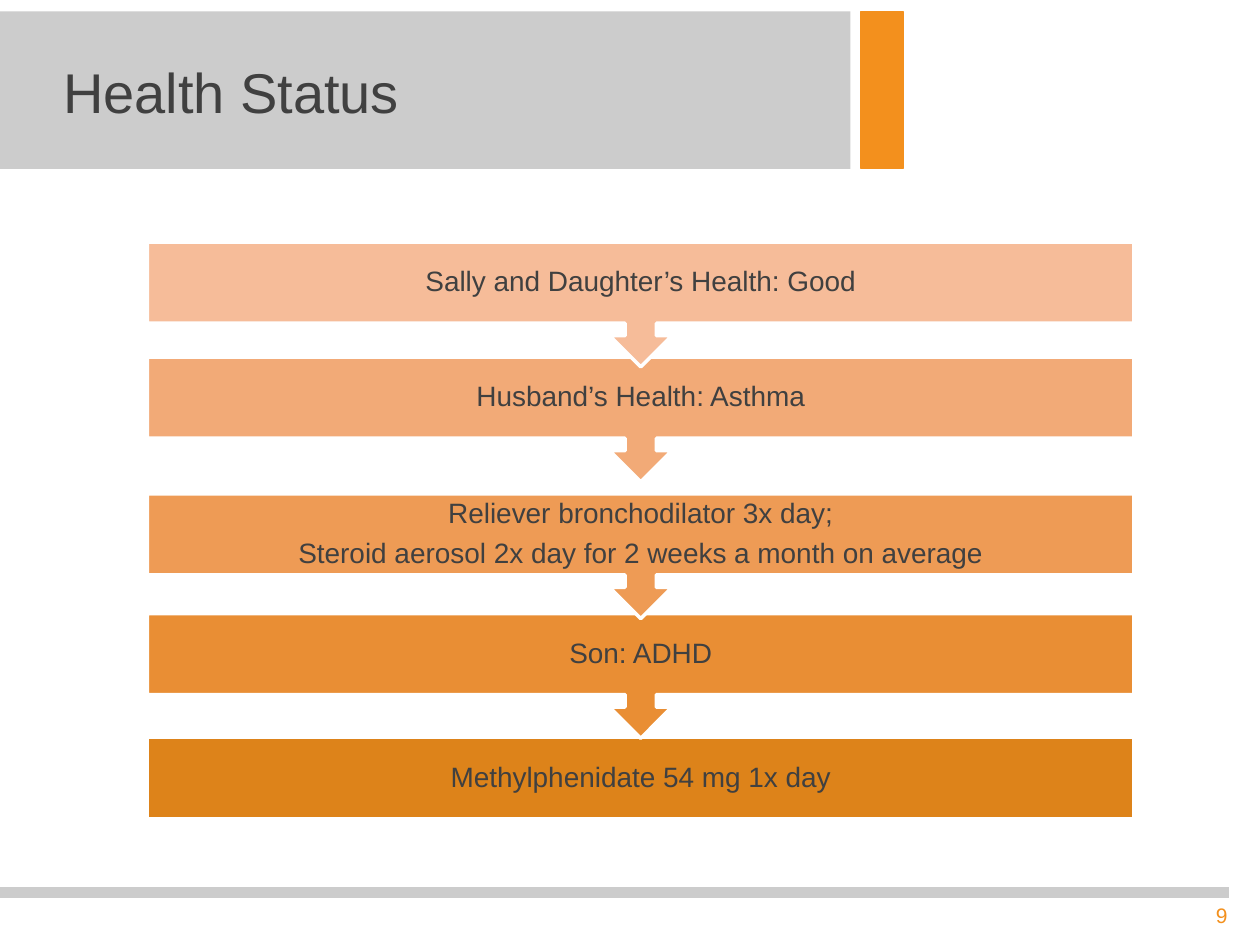
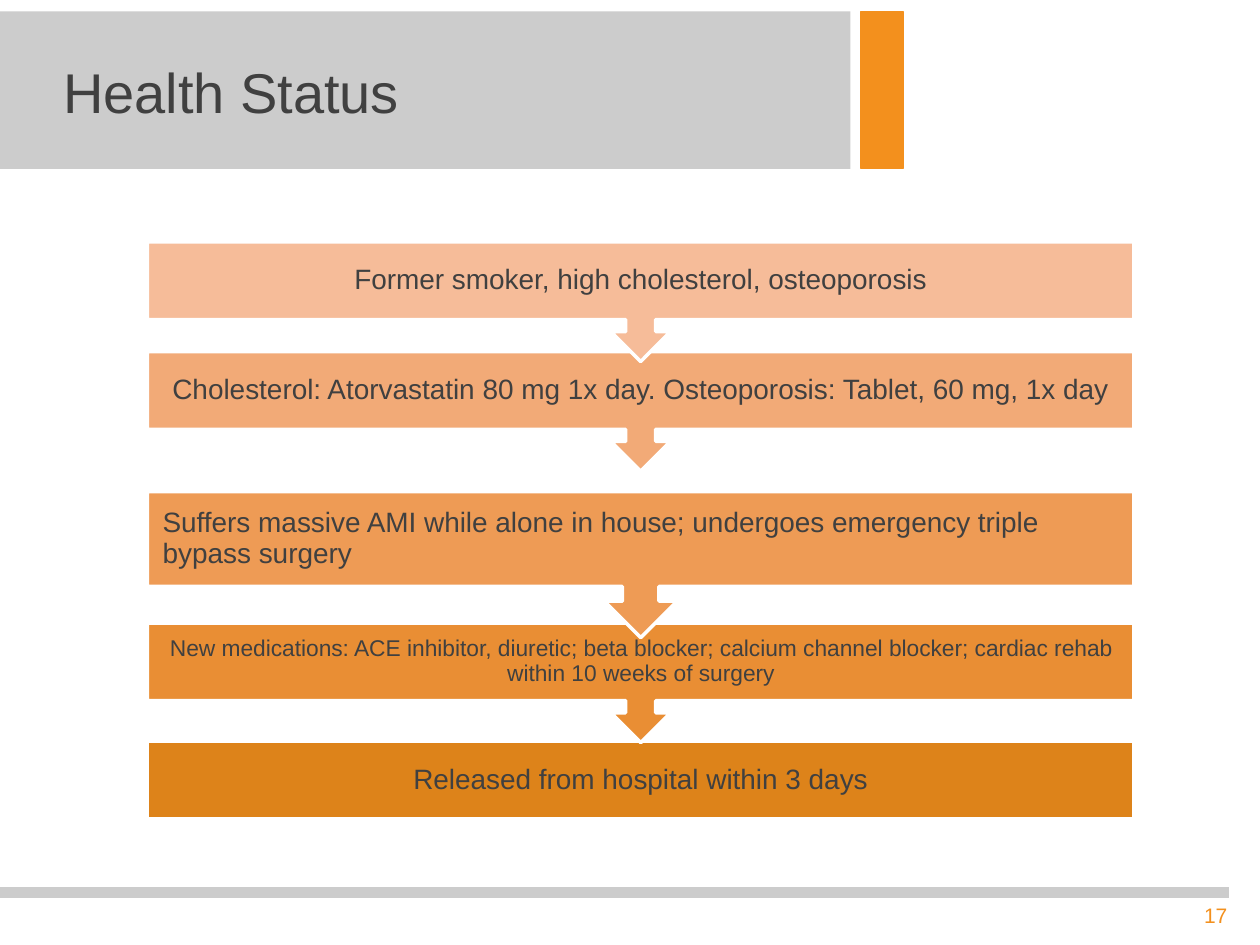
from dataclasses import dataclass

from lxml.etree import SubElement
from pptx import Presentation
from pptx.dml.color import RGBColor
from pptx.enum.shapes import MSO_CONNECTOR as Connector, MSO_SHAPE as Preset
from pptx.enum.text import MSO_ANCHOR as Anchor, PP_ALIGN as Align
from pptx.oxml.ns import qn
from pptx.util import Length, Pt

FONT = "Arial"
ORANGE = RGBColor(0xF3, 0x90, 0x1D)
GREY = RGBColor(0xCC, 0xCC, 0xCC)
DARK = RGBColor(0x40, 0x40, 0x40)
WHITE = RGBColor(0xFF, 0xFF, 0xFF)
STEP_COLOURS = (
    RGBColor(0xF6, 0xBC, 0x99),
    RGBColor(0xF2, 0xAA, 0x77),
    RGBColor(0xEE, 0x9B, 0x55),
    RGBColor(0xE9, 0x8E, 0x34),
    RGBColor(0xDD, 0x83, 0x1A),
)

BAND_TOP, BAND_HEIGHT = Pt(6.5), Pt(90)
STEP_LEFT, STEP_WIDTH = Pt(84.3), Pt(563.7)


@dataclass(frozen=True)
class Step:
    lines: tuple[str, ...]
    top: float
    height: float
    size: float = 16
    align: Align = Align.CENTER
    inset: float = 8.64


@dataclass(frozen=True)
class Page:
    title: str
    number: int
    steps: tuple[Step, ...]


PAGES = (
    Page("Health Status", 9, (
        Step(("Sally and Daughter’s Health: Good",), 138.4, 71.3),
        Step(("Husband’s Health: Asthma",), 204.1, 71.3),
        Step(("Reliever bronchodilator 3x day;",
              "Steroid aerosol 2x day for 2 weeks a month on average"), 282.2, 71.3),
        Step(("Son: ADHD",), 350.6, 71.3),
        Step(("Methylphenidate 54 mg 1x day",), 421.4, 46.6),
    )),
    Page("Health Status", 17, (
        Step(("Former smoker, high cholesterol, osteoporosis",), 138.2, 68.4),
        Step(("Cholesterol: Atorvastatin 80 mg 1x day. Osteoporosis: Tablet, 60 mg, 1x day",),
             200.9, 68.4),
        Step(("Suffers massive AMI while alone in house; undergoes emergency triple "
              "bypass surgery",), 280.9, 83.5, align=Align.LEFT),
        Step(("New medications: ACE inhibitor, diuretic; beta blocker; calcium channel "
              "blocker; cardiac rehab within 10 weeks of surgery",),
             356, 68.4, size=13, inset=7.2),
        Step(("Released from hospital within 3 days",), 423.4, 44.6),
    )),
)


def write(box, *lines: str, size: float, colour: RGBColor = DARK,
          align: Align = Align.LEFT, anchor: Anchor = Anchor.MIDDLE,
          line_spacing: float | Length | None = None, space_after: float = 0,
          insets: tuple[float, float, float, float] = (7.2, 3.6, 7.2, 3.6)) -> None:
    """Fill a shape with one paragraph a line; insets are left, top, right, bottom."""
    frame = box.text_frame
    frame.word_wrap = True
    frame.vertical_anchor = anchor
    (frame.margin_left, frame.margin_top,
     frame.margin_right, frame.margin_bottom) = map(Pt, insets)
    for index, line in enumerate(lines):
        para = frame.paragraphs[0] if index == 0 else frame.add_paragraph()
        para.alignment = align
        para.space_after = Pt(space_after)
        if line_spacing is not None:
            para.line_spacing = line_spacing
        span = para.add_run()
        span.text = line
        span.font.name = FONT
        span.font.size = Pt(size)
        span.font.color.rgb = colour


def add_block(page, preset: Preset, left: Length, top: Length, width: Length,
              height: Length, fill: RGBColor, line: RGBColor | None = None,
              line_width: float = 0.75):
    block = page.shapes.add_shape(preset, left, top, width, height)
    block.shadow.inherit = False
    block.fill.solid()
    block.fill.fore_color.rgb = fill
    if line is None:
        block.line.fill.background()
    else:
        block.line.color.rgb = line
        block.line.width = Pt(line_width)
    return block


def draw_frame(page, title: str, number: int) -> None:
    """Draw the footer rule, page number, orange tab and title band."""
    rule = page.shapes.add_connector(Connector.STRAIGHT, 0, Pt(510), Pt(702), Pt(510))
    rule.line.color.rgb = GREY
    rule.line.width = Pt(6)
    SubElement(rule._element.spPr, qn("a:effectLst"))

    number_box = page.shapes.add_textbox(Pt(570), Pt(512), Pt(138.5), Pt(21.6))
    write(number_box, str(number), size=12, colour=ORANGE, align=Align.RIGHT,
          anchor=Anchor.TOP)

    add_block(page, Preset.RECTANGLE, Pt(492), BAND_TOP, Pt(24), BAND_HEIGHT,
              ORANGE, line=ORANGE)
    band = add_block(page, Preset.RECTANGLE, 0, BAND_TOP, Pt(486), BAND_HEIGHT, GREY)
    write(band, title, size=32, line_spacing=Pt(36), insets=(36, 7.2, 7.2, 3.6))


def draw_steps(page, steps: tuple[Step, ...]) -> None:
    """Stack the steps from the last up, so each arrow overlaps the step below."""
    for step, colour in reversed(list(zip(steps, STEP_COLOURS))):
        preset = Preset.RECTANGLE if step is steps[-1] else Preset.DOWN_ARROW_CALLOUT
        block = add_block(page, preset, STEP_LEFT, Pt(step.top), STEP_WIDTH,
                          Pt(step.height), colour, line=WHITE, line_width=2)
        write(block, *step.lines, size=step.size, align=step.align, line_spacing=0.9,
              space_after=0.35 * step.size, insets=(step.inset, 0, step.inset, 0))


def main() -> None:
    deck = Presentation()
    deck.slide_width, deck.slide_height = Pt(720), Pt(540)
    blank = deck.slide_layouts[6]
    for content in PAGES:
        page = deck.slides.add_slide(blank)
        draw_frame(page, content.title, content.number)
        draw_steps(page, content.steps)
    deck.save("out.pptx")


if __name__ == "__main__":
    main()
